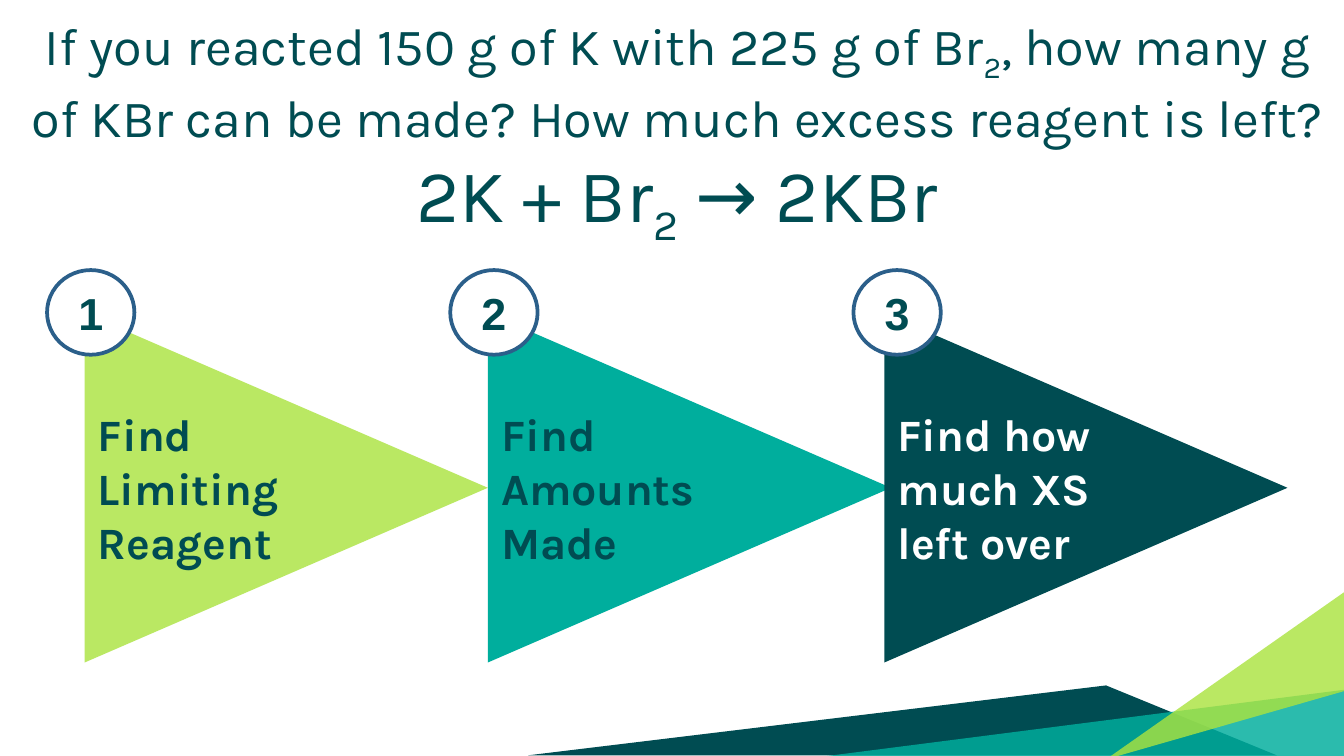
from lxml import etree
from pptx import Presentation
from pptx.dml import color
from pptx.enum import shapes, text
from pptx.oxml import ns
from pptx.util import Inches, Pt

DARK, TEAL, LIME, WHITE, BLUE = "004C52", "00AE9D", "ABE33F", "FFFFFF", "2B5F8A"


def rgb(value):
    return color.RGBColor.from_string(value)


def paint(shape, fill, alpha=100, line=None):
    shape.shadow.inherit = False
    shape.fill.solid()
    shape.fill.fore_color.rgb = rgb(fill)
    if alpha < 100:
        tint = shape.fill._xPr.find(ns.qn("a:solidFill"))[0]
        etree.SubElement(tint, ns.qn("a:alpha")).set("val", str(alpha * 1000))
    if line:
        shape.line.color.rgb = rgb(line)
        shape.line.width = Pt(2)
    else:
        shape.line.fill.background()


def write(paragraph, words, size=24, font="Karla", ink=DARK, bold=False, sub=False):
    for index, part in enumerate(words.split("\n")):
        if index:
            paragraph.add_line_break()
        if not part:
            continue
        run = paragraph.add_run()
        run.text = part
        run.font.size = Pt(size)
        run.font.name = font
        run.font.bold = bold
        run.font.color.rgb = rgb(ink)
        if sub:
            run.font._element.set("baseline", "-25000")


def set_frame(shape, margins, anchor, align, wrap=True):
    frame = shape.text_frame
    frame.word_wrap = wrap
    frame.vertical_anchor = anchor
    (frame.margin_left, frame.margin_top,
     frame.margin_right, frame.margin_bottom) = map(Inches, margins)
    frame.paragraphs[0].alignment = align
    return frame.paragraphs[0]


def add_corner(slide, left, top, width, height):
    facets = [
        ([(0, 0.52), (5.57, 0.52), (4.3, 0)], 0, 0.7, DARK, 100),
        ([(3.98, 0), (3.98, 0.51), (0, 0.51)], 2.11, 0.73, TEAL, 83),
        ([(1.78, 0.74), (1.78, 0), (0, 1.25)], 4.3, 0, LIME, 81),
    ]
    for points, dx, dy, fill, alpha in facets:
        corners = [(Inches(left + dx + x), Inches(top + dy + y)) for x, y in points]
        builder = slide.shapes.build_freeform(*corners[0])
        builder.add_line_segments(corners[1:], close=True)
        paint(builder.convert_to_shape(), fill, alpha)


def add_question(slide, left, top, width, height):
    question = slide.shapes.add_textbox(*map(Inches, (left, top, width, height)))
    paragraph = set_frame(question, (0.1,) * 4, text.MSO_ANCHOR.TOP, text.PP_ALIGN.CENTER)
    paragraph.space_before = Pt(6)
    paragraph._p.get_or_add_pPr().set("marL", str(Inches(0.08)))
    write(paragraph, "If you reacted 150 g of K with 225 g of Br", size=28)
    write(paragraph, "2", size=28, sub=True)
    write(paragraph, ", how many g of KBr can be made? "
                     "How much excess reagent is left?\n", size=28)
    write(paragraph, "2K + Br", size=40)
    write(paragraph, "2", size=40, sub=True)
    write(paragraph, " → 2KBr", size=40)


def add_step(slide, left, top, width, height, label, fill, alpha, ink):
    arrow = slide.shapes.add_shape(
        shapes.MSO_SHAPE.PENTAGON, *map(Inches, (left, top, width, height)))
    arrow.adjustments[0] = 2.12
    paint(arrow, fill, alpha)
    paragraph = set_frame(arrow, (0.1, 0, 0, 0), text.MSO_ANCHOR.MIDDLE,
                          text.PP_ALIGN.LEFT, wrap="\n" not in label)
    write(paragraph, label, ink=ink, bold=True)


def add_badge(slide, left, top, width, height, number):
    badge = slide.shapes.add_shape(
        shapes.MSO_SHAPE.OVAL, *map(Inches, (left, top, width, height)))
    paint(badge, WHITE, line=BLUE)
    paragraph = set_frame(badge, (0.1, 0.05, 0.1, 0.05),
                          text.MSO_ANCHOR.MIDDLE, text.PP_ALIGN.CENTER)
    write(paragraph, str(number), font="Arial", bold=True)


def main():
    deck = Presentation()
    deck.slide_width = Inches(10)
    deck.slide_height = deck.slide_width * 9 // 16
    slide = deck.slides.add_slide(deck.slide_layouts[6])
    add_corner(slide, 3.93, 4.4, 6.09, 1.25)
    add_question(slide, 0, 0, 10, 1.76)
    steps = [
        (0.63, "Find Limiting Reagent", LIME, 81, DARK),
        (3.63, "Find \nAmounts \nMade", TEAL, 100, DARK),
        (6.58, "Find how \nmuch XS \nleft over", DARK, 100, WHITE),
    ]
    for left, *style in steps:
        add_step(slide, left, 2.33, 3, 2.6, *style)
    for index in range(len(steps)):
        add_badge(slide, 0.35 + 3 * index, 2.01, 0.65, 0.63, index + 1)
    deck.save("out.pptx")


if __name__ == "__main__":
    main()
